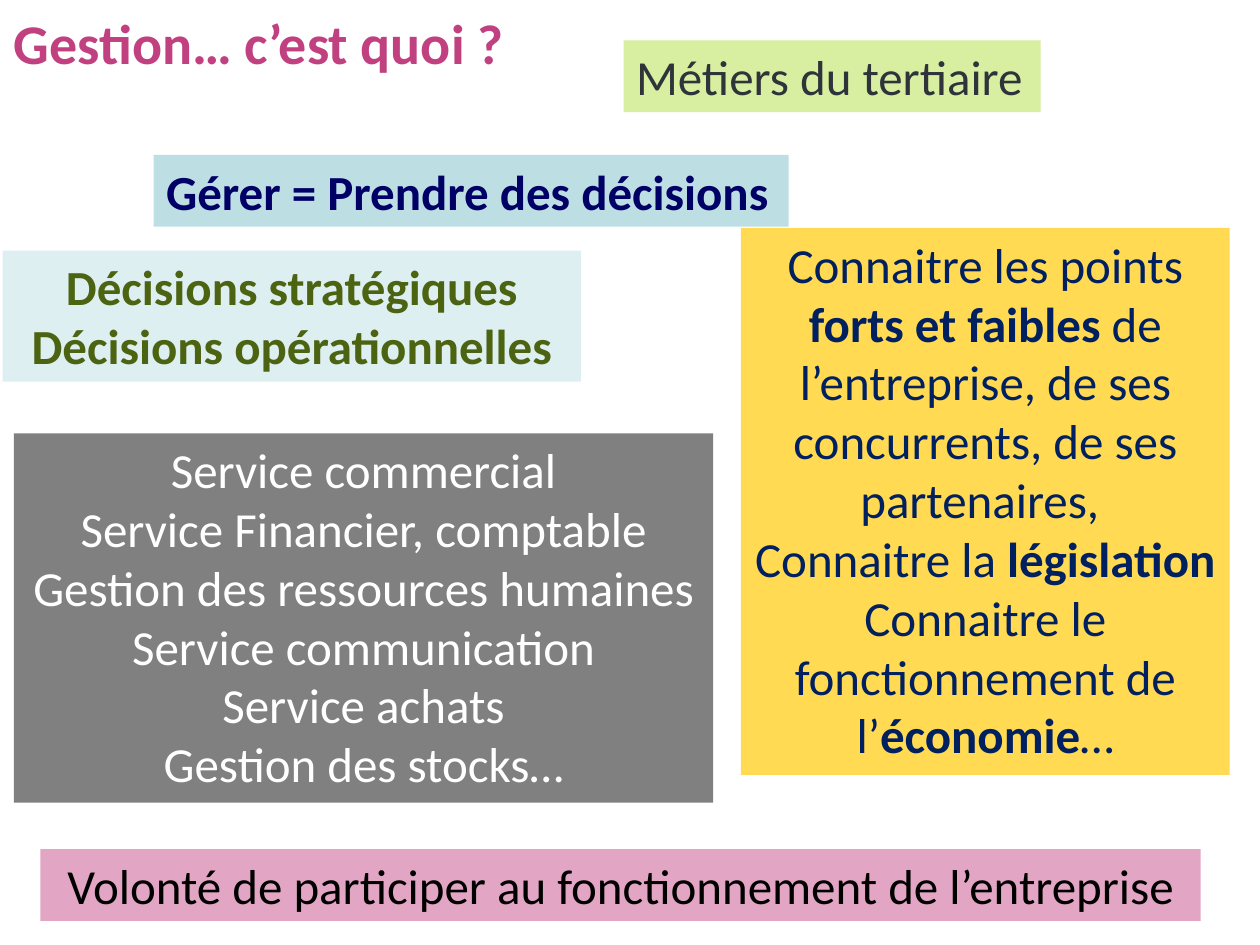
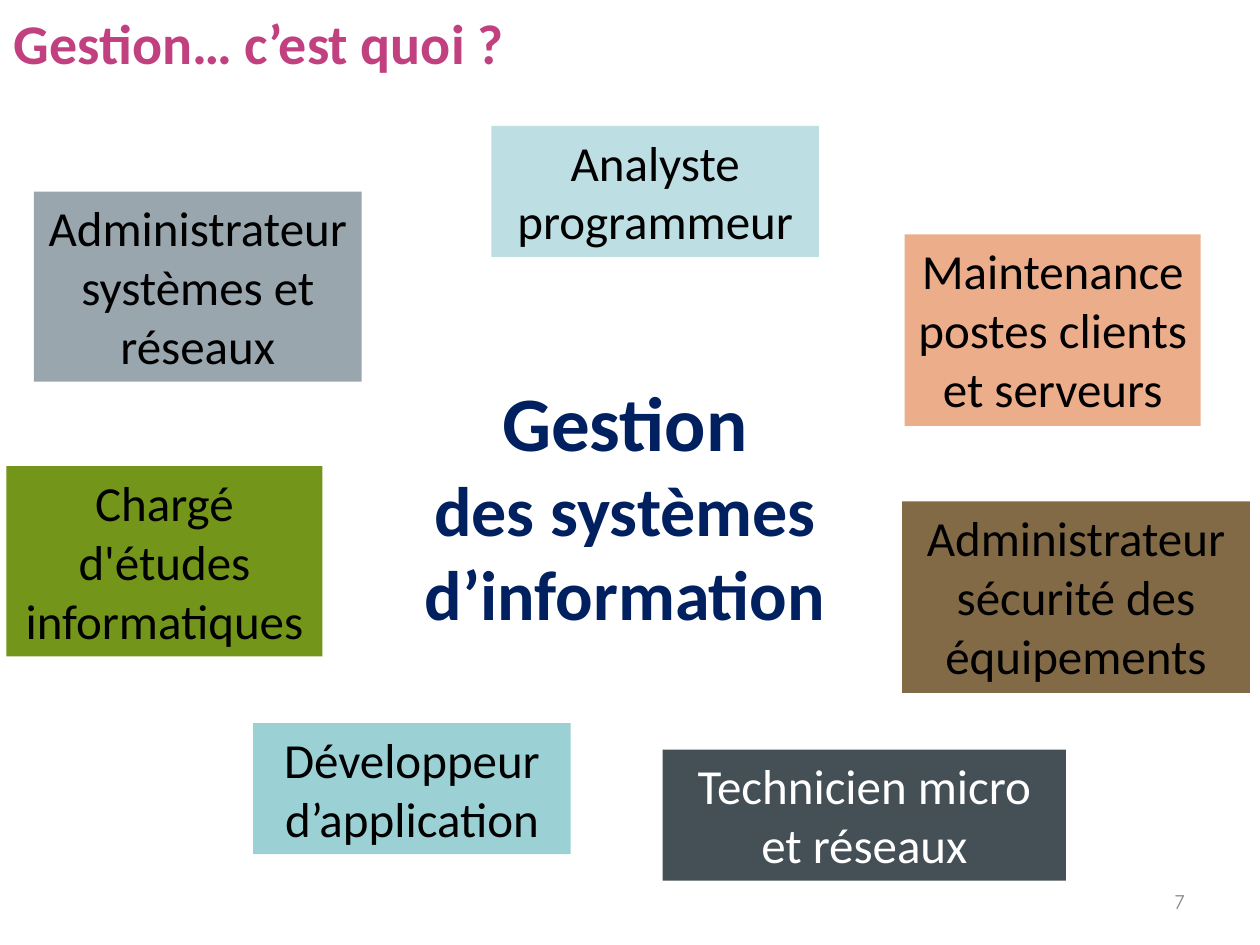
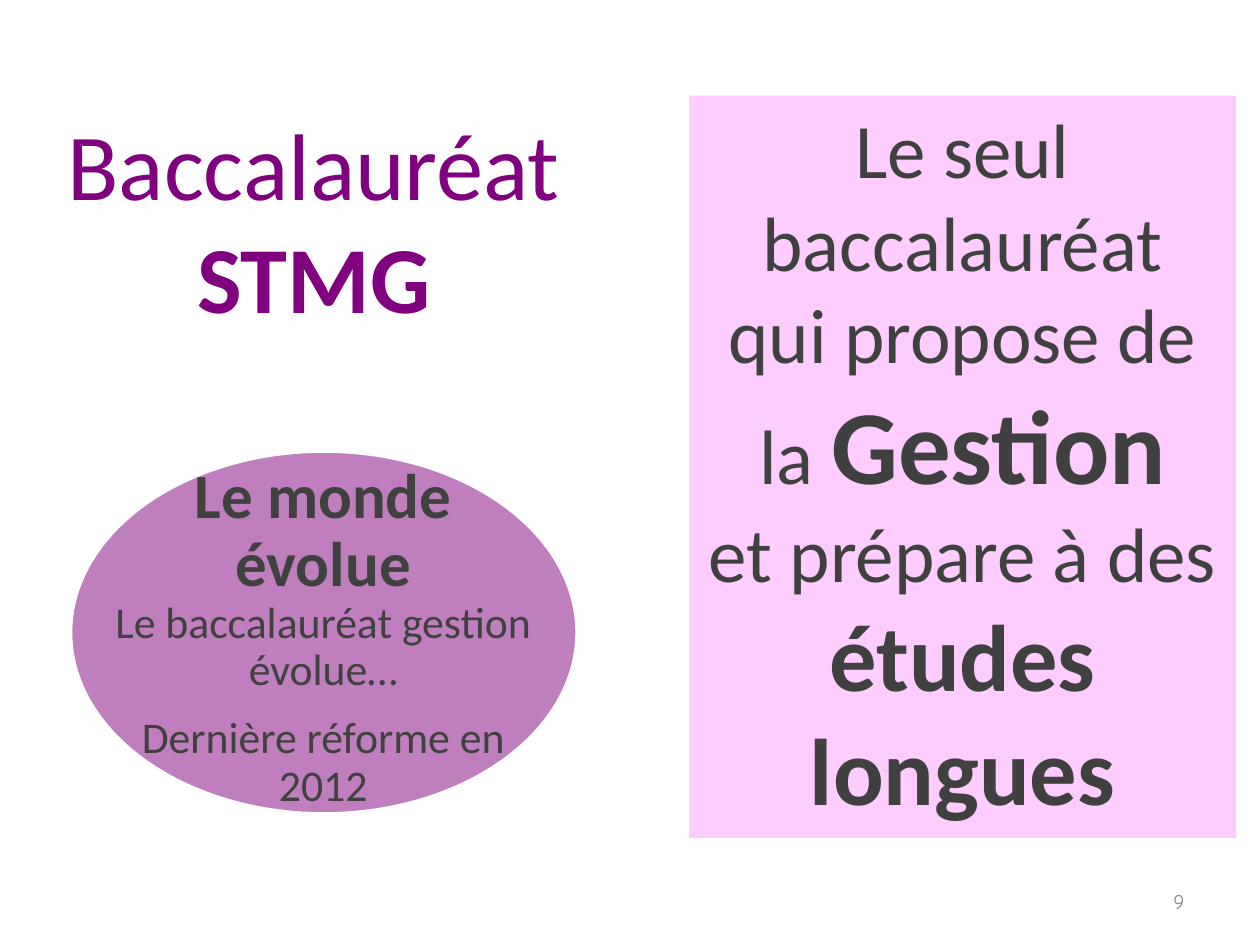
"""Build three slides on management careers and the STMG baccalauréat."""
from collections import namedtuple

from lxml import etree
from pptx import Presentation
from pptx.dml.color import RGBColor
from pptx.enum.shapes import MSO_SHAPE
from pptx.enum.text import MSO_ANCHOR, MSO_AUTO_SIZE, PP_ALIGN
from pptx.oxml.ns import qn
from pptx.util import Inches, Pt

RECTANGLE, OVAL = MSO_SHAPE.RECTANGLE, MSO_SHAPE.OVAL
TOP, MIDDLE = MSO_ANCHOR.TOP, MSO_ANCHOR.MIDDLE
LEFT, CENTER, RIGHT = PP_ALIGN.LEFT, PP_ALIGN.CENTER, PP_ALIGN.RIGHT
GROW, FIXED = MSO_AUTO_SIZE.SHAPE_TO_FIT_TEXT, MSO_AUTO_SIZE.NONE

BLACK = RGBColor(0x00, 0x00, 0x00)
WHITE = RGBColor(0xFF, 0xFF, 0xFF)
ROSE = RGBColor(0xC0, 0x40, 0x80)
PALE_ROSE = RGBColor(0xE2, 0xA6, 0xC4)
PINK = RGBColor(0xFF, 0xCC, 0xFF)
PURPLE = RGBColor(0x80, 0x00, 0x80)
NAVY = RGBColor(0x00, 0x20, 0x60)
DEEP_BLUE = RGBColor(0x00, 0x00, 0x66)
ICE = RGBColor(0xDE, 0xEF, 0xF1)
SKY = RGBColor(0xBD, 0xDF, 0xE3)
TEAL = RGBColor(0x9B, 0xD0, 0xD5)
LIME = RGBColor(0xD8, 0xEE, 0xA1)
GREEN = RGBColor(0x72, 0x95, 0x1A)
DARK_GREEN = RGBColor(0x4C, 0x63, 0x12)
YELLOW = RGBColor(0xFF, 0xDA, 0x52)
PEACH = RGBColor(0xEC, 0xAD, 0x8A)
BROWN = RGBColor(0x82, 0x6A, 0x47)
SLATE = RGBColor(0x99, 0xA6, 0xAE)
DARK_SLATE = RGBColor(0x44, 0x4F, 0x56)
INK = RGBColor(0x2E, 0x34, 0x3A)
CHARCOAL = RGBColor(0x40, 0x40, 0x40)
GRAY = RGBColor(0x80, 0x80, 0x80)
NUMBER_GRAY = RGBColor(0x89, 0x89, 0x89)

FONT, NUMBER_FONT = "Calibri", "Comic Neue"
BREAK = "\n"

Run = namedtuple("Run", "text size bold", defaults=(28, False))
Panel = namedtuple("Panel", "at fill color paragraphs align wrap", defaults=(CENTER, True))

QUESTION_AT = (0.01, 0.02, 4.13, 0.64)
QUESTION = [[Run("Gestion… c’est quoi ?", 32, True)]]
NUMBER_AT = (7.17, 6.95, 2.33, 0.4)

SERVICES = [
    "Service commercial",
    "Service Financier, comptable",
    "Gestion des ressources humaines",
    "Service communication",
    "Service achats",
    "Gestion des stocks…",
]
KNOWLEDGE = [
    [Run("Connaitre les points "), Run("forts et faibles", bold=True),
     Run(" de l’entreprise, de ses concurrents, de ses partenaires, ")],
    [Run("Connaitre la "), Run("législation", bold=True)],
    [Run("Connaitre le fonctionnement de l’"), Run("économie", bold=True), Run("…")],
]
MANAGEMENT = [
    Panel((4.95, 0.32, 3.31, 0.57), LIME, INK, [[Run("Métiers du tertiaire")]], LEFT),
    Panel((0.02, 1.99, 4.59, 1.04), ICE, DARK_GREEN,
          [[Run("Décisions stratégiques", bold=True)],
           [Run("Décisions opérationnelles", bold=True)]]),
    Panel((5.88, 1.81, 3.88, 4.34), YELLOW, NAVY, KNOWLEDGE),
    Panel((0.11, 3.44, 5.55, 2.93), GRAY, WHITE, [[Run(service)] for service in SERVICES]),
    Panel((0.32, 6.74, 9.21, 0.57), PALE_ROSE, BLACK,
          [[Run("Volonté de participer au fonctionnement de l’entreprise")]]),
    Panel((1.22, 1.23, 5.04, 0.57), SKY, DEEP_BLUE,
          [[Run("Gérer = Prendre des décisions", bold=True)]], LEFT, False),
]

SYSTEMS_AT = (3.25, 2.92, 3.42, 2.19)
SYSTEMS = [
    [Run("Gestion", 44, True)],
    [Run("des systèmes", 40, True)],
    [Run("d’information", 40, True)],
]
JOBS = [
    ("Administrateur systèmes et réseaux", (0.27, 1.52, 2.6, 1.51), SLATE, BLACK),
    ("Chargé d'études informatiques", (0.05, 3.7, 2.51, 1.51), GREEN, BLACK),
    ("Technicien micro et réseaux", (5.26, 5.95, 3.2, 1.04), DARK_SLATE, WHITE),
    ("Maintenance postes clients et serveurs", (7.18, 1.86, 2.35, 1.52), PEACH, BLACK),
    ("Développeur d’application", (2.01, 5.74, 2.52, 1.04), TEAL, BLACK),
    ("Administrateur sécurité des équipements", (7.16, 3.98, 2.76, 1.52), BROWN, BLACK),
    ("Analyste programmeur", (3.9, 1, 2.6, 1.04), SKY, BLACK),
]

DIPLOMA_AT = (0.41, 0.79, 4.16, 1.92)
DIPLOMA = [[Run("Baccalauréat ", 54), Run("STMG", 54, True)]]
PROMISE = Panel((5.47, 0.76, 4.34, 5.89), PINK, CHARCOAL, [
    [Run("Le seul baccalauréat", 44)],
    [Run("qui propose de la ", 44), Run("Gestion", 60, True)],
    [Run("et prépare à des ", 44), Run("études longues", 54, True)],
])
REFORM_OVAL_AT = (0.56, 3.58, 4.02, 2.88)
REFORM_TEXT_AT = (0.9, 3.96, 3.33, 2.2)
REFORM = [
    [Run("Le monde évolue", 36, True), Run(BREAK), Run("Le baccalauréat gestion évolue…", 25)],
    [Run("Dernière réforme en 2012", 25)],
]


def box(at):
    return [Inches(length) for length in at]


def write(shape, paragraphs, color, align=CENTER, wrap=True, anchor=TOP, size_mode=GROW, font=FONT):
    frame = shape.text_frame
    frame.word_wrap, frame.vertical_anchor, frame.auto_size = wrap, anchor, size_mode
    for index, runs in enumerate(paragraphs):
        paragraph = frame.add_paragraph() if index else frame.paragraphs[0]
        paragraph.alignment = align
        for part in runs:
            if part.text == BREAK:
                paragraph.add_line_break()
                continue
            run = paragraph.add_run()
            run.text = part.text
            run.font.name, run.font.size, run.font.bold = font, Pt(part.size), part.bold
            run.font.color.rgb = color


def add_filled(shapes, preset, at, fill):
    shape = shapes.add_shape(preset, *box(at))
    shape.shadow.inherit = False
    shape.fill.solid()
    shape.fill.fore_color.rgb = fill
    shape.line.fill.background()
    return shape


def add_panel(slide, panel):
    shape = add_filled(slide.shapes, RECTANGLE, panel.at, panel.fill)
    write(shape, panel.paragraphs, panel.color, panel.align, panel.wrap)


def add_slide(deck, title_at, title, color, align, wrap, number=None):
    slide = deck.slides.add_slide(deck.slide_layouts[5])
    heading = slide.shapes.title
    heading.left, heading.top, heading.width, heading.height = box(title_at)
    write(heading, title, color, align, wrap)
    if number:
        write(slide.shapes.add_textbox(*box(NUMBER_AT)), [[Run(number, 12)]], NUMBER_GRAY,
              RIGHT, anchor=MIDDLE, size_mode=FIXED, font=NUMBER_FONT)
    return slide


def add_reform(slide):
    group = slide.shapes.add_group_shape()
    oval = add_filled(group.shapes, OVAL, REFORM_OVAL_AT, PURPLE)
    oval.line.color.rgb, oval.line.width = WHITE, Pt(2)
    tint = oval.fill._xPr.find(qn("a:solidFill"))[0]
    etree.SubElement(tint, qn("a:alpha"), val="50000")
    caption = group.shapes.add_textbox(*box(REFORM_TEXT_AT))
    write(caption, REFORM, CHARCOAL, anchor=MIDDLE, size_mode=FIXED)
    frame = caption.text_frame
    frame.margin_left = frame.margin_right = frame.margin_top = frame.margin_bottom = 0
    for paragraph in frame.paragraphs:
        paragraph.line_spacing, paragraph.space_after = 0.9, Pt(12)


def main():
    deck = Presentation()
    deck.slide_width, deck.slide_height = Inches(10), Inches(7.5)

    management = add_slide(deck, QUESTION_AT, QUESTION, ROSE, LEFT, False)
    for panel in MANAGEMENT:
        add_panel(management, panel)

    careers = add_slide(deck, QUESTION_AT, QUESTION, ROSE, LEFT, False, "7")
    write(careers.shapes.add_textbox(*box(SYSTEMS_AT)), SYSTEMS, NAVY, wrap=False)
    for job, at, fill, color in JOBS:
        add_panel(careers, Panel(at, fill, color, [[Run(job)]]))

    diploma = add_slide(deck, DIPLOMA_AT, DIPLOMA, PURPLE, CENTER, True, "9")
    add_panel(diploma, PROMISE)
    add_reform(diploma)

    deck.save("out.pptx")


if __name__ == "__main__":
    main()
